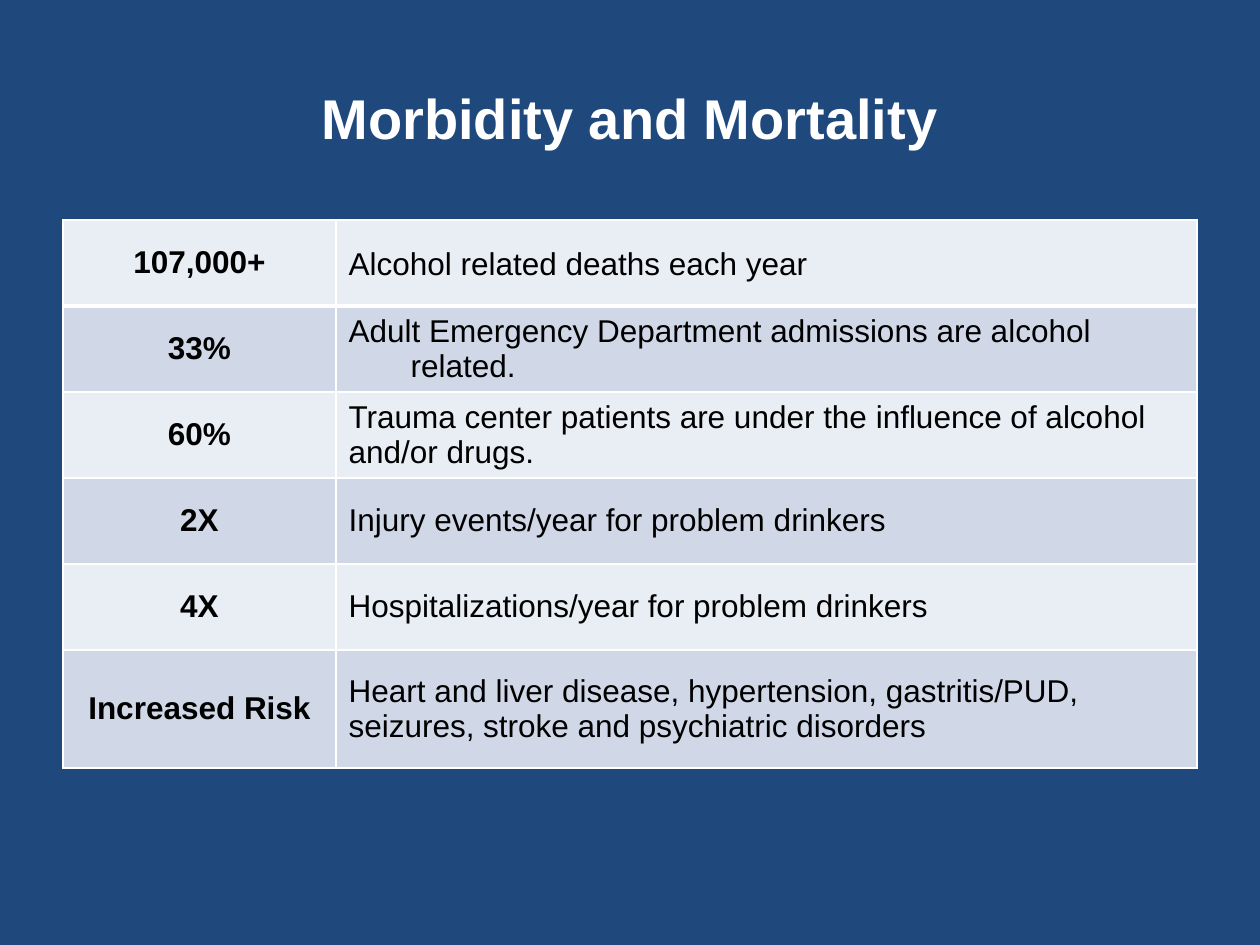
"""Build the Morbidity and Mortality slide."""
from dataclasses import dataclass

from lxml import etree
from pptx import Presentation
from pptx import util as u
from pptx.dml.color import RGBColor
from pptx.enum import text
from pptx.oxml.ns import qn

FONT = "Arial"
NAVY, WHITE, BLACK = "1F497D", "FFFFFF", "000000"
BANDS = ("E9EDF4", "D0D8E8")
COLUMN_WIDTHS = (273, 861)


@dataclass
class Fact:
    """One table row: a figure and what it counts."""
    figure: str
    meaning: str
    height: int = 86
    spacing: float = 1.0
    hanging: int = 0


FACTS = (
    Fact("107,000+", "Alcohol related deaths each year", spacing=1.1),
    Fact("33%", "Adult Emergency Department admissions are alcohol related.", hanging=62),
    Fact("60%", "Trauma center patients are under the influence of alcohol and/or drugs."),
    Fact("2X", "Injury events/year for problem drinkers"),
    Fact("4X", "Hospitalizations/year for problem drinkers"),
    Fact("Increased Risk",
         "Heart and liver disease, hypertension, gastritis/PUD, "
         "seizures, stroke and psychiatric disorders", height=118),
)


def px(length: int) -> int:
    """Turn pixels into EMU."""
    return round(length * u.Inches(1) / 126)


def color(value: str) -> RGBColor:
    """Turn a hex string into a colour."""
    return RGBColor.from_string(value)


def write(frame, words: str, size: int, ink: str, bold: bool, centred: bool):
    """Fill a text frame with one formatted paragraph and return it."""
    frame.text = words
    frame.vertical_anchor = text.MSO_ANCHOR.MIDDLE
    para = frame.paragraphs[0]
    para.alignment = text.PP_ALIGN.CENTER if centred else text.PP_ALIGN.LEFT
    for span in para.runs:
        span.font.name, span.font.size, span.font.bold = FONT, u.Pt(size), bold
        span.font.color.rgb = color(ink)
    return para


def add_borders(cell, top: int, bottom: int) -> None:
    """Draw white borders, with widths in points, around a cell."""
    properties = cell._tc.get_or_add_tcPr()
    widths = {"a:lnL": 1, "a:lnR": 1, "a:lnT": top, "a:lnB": bottom}
    for index, (tag, width) in enumerate(widths.items()):
        line = etree.Element(qn(tag), w=str(u.Pt(width)))
        fill = etree.SubElement(line, qn("a:solidFill"))
        etree.SubElement(fill, qn("a:srgbClr"), val=WHITE)
        properties.insert(index, line)


def add_title(page, words: str) -> None:
    """Place and format the title."""
    title = page.shapes.title
    title.left, title.top, title.width, title.height = px(63), px(38), px(1134), px(158)
    write(title.text_frame, words, 32, WHITE, bold=True, centred=True)


def add_facts(page, facts: tuple[Fact, ...]) -> None:
    """Add the banded table of facts."""
    height = sum(fact.height for fact in facts)
    table = page.shapes.add_table(len(facts), len(COLUMN_WIDTHS), px(63), px(220),
                                  px(sum(COLUMN_WIDTHS)), px(height)).table
    table.first_row = table.horz_banding = False
    for column, width in zip(table.columns, COLUMN_WIDTHS):
        column.width = px(width)
    for index, fact in enumerate(facts):
        row = table.rows[index]
        row.height = px(fact.height)
        figure, meaning = row.cells
        write(figure.text_frame, fact.figure, 18, BLACK, bold=True, centred=True)
        para = write(meaning.text_frame, fact.meaning, 18, BLACK, bold=False, centred=False)
        para.line_spacing = fact.spacing
        if fact.hanging:
            properties = para._p.get_or_add_pPr()
            properties.set("marL", str(px(fact.hanging)))
            properties.set("indent", str(-px(fact.hanging)))
        for cell in (figure, meaning):
            cell.vertical_anchor = text.MSO_ANCHOR.MIDDLE
            cell.fill.solid()
            cell.fill.fore_color.rgb = color(BANDS[index % 2])
            add_borders(cell, top=3 if index == 1 else 1, bottom=3 if index == 0 else 1)


def main() -> None:
    """Build and save the deck."""
    deck = Presentation()
    deck.slide_width, deck.slide_height = px(1260), px(945)
    page = deck.slides.add_slide(deck.slide_layouts[5])
    page.background.fill.solid()
    page.background.fill.fore_color.rgb = color(NAVY)
    add_facts(page, FACTS)
    add_title(page, "Morbidity and Mortality")
    deck.save("out.pptx")


if __name__ == "__main__":
    main()
